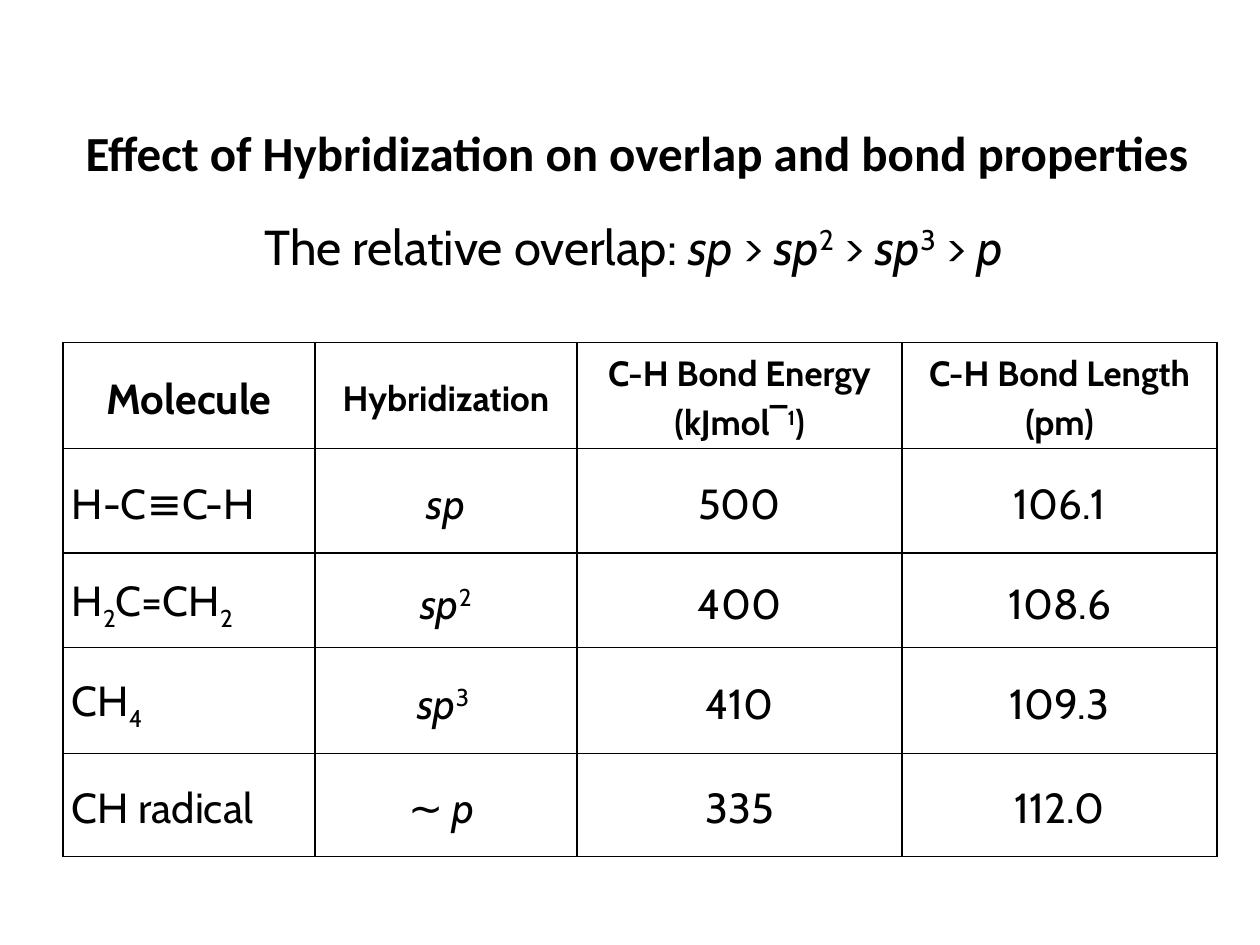
from typing import NamedTuple

import lxml.etree
import pptx
import pptx.dml.color
import pptx.enum.text
import pptx.oxml.ns
import pptx.util

Inches = pptx.util.Inches
Pt = pptx.util.Pt
Align = pptx.enum.text.PP_ALIGN
BLACK = pptx.dml.color.RGBColor(0, 0, 0)


class Run(NamedTuple):
    text: str
    italic: bool = False
    baseline: int = 0  # percent of the font size


class Heading(NamedTuple):
    lines: list[list[Run]]
    size: int = 20


def plain(text: str) -> Run:
    return Run(text)


def orbital(text: str) -> Run:
    return Run(text, italic=True)


def superscript(text: str) -> Run:
    return Run(text, baseline=30)


def subscript(text: str) -> Run:
    return Run(text, baseline=-25)


def write(frame, lines: list[list[Run]], *, size: int, font: str = "Cabin",
          bold: bool = False, align=Align.LEFT, line_spacing: float = 1.0,
          gap: int = 0) -> None:
    """Fill a text frame, one paragraph for each line of runs."""
    for index, line in enumerate(lines):
        paragraph = frame.add_paragraph() if index else frame.paragraphs[0]
        paragraph.alignment = align
        paragraph.line_spacing = line_spacing
        paragraph.space_before = paragraph.space_after = Pt(gap)
        for part in line:
            run = paragraph.add_run()
            run.text = part.text
            run.font.name = font
            run.font.size = Pt(size)
            run.font.bold = bold
            run.font.italic = part.italic
            run.font.color.rgb = BLACK
            if part.baseline:
                run.font._element.set("baseline", str(part.baseline * 1000))


def fit_on_one_line(frame) -> None:
    frame.word_wrap = False
    frame.auto_size = pptx.enum.text.MSO_AUTO_SIZE.SHAPE_TO_FIT_TEXT


def format_cell(cell) -> None:
    """Clear fill, thin black borders and narrow margins."""
    cell.margin_left = cell.margin_right = Inches(0.07)
    cell.margin_top = cell.margin_bottom = 0
    cell.vertical_anchor = pptx.enum.text.MSO_ANCHOR.MIDDLE
    properties = cell._tc.get_or_add_tcPr()
    qn = pptx.oxml.ns.qn
    for side in ("a:lnL", "a:lnR", "a:lnT", "a:lnB"):
        border = lxml.etree.SubElement(properties, qn(side), w=str(Pt(1)))
        fill = lxml.etree.SubElement(border, qn("a:solidFill"))
        lxml.etree.SubElement(fill, qn("a:srgbClr"), val=str(BLACK))
    cell.fill.background()


HEADINGS = [
    Heading([[plain("Molecule")]], size=24),
    Heading([[plain("Hybridization")]]),
    Heading([[plain("C-H Bond Energy")],
             [plain("(kJmol‾"), superscript("1"), plain(")")]]),
    Heading([[plain("C-H Bond Length")], [plain("(pm)")]]),
]
# Molecule, hybridization, bond energy, bond length
MOLECULES = [
    ([plain("H-C≡C-H")], [orbital("sp")], [plain("500")], [plain("106.1")]),
    ([plain("H"), subscript("2"), plain("C=CH"), subscript("2")],
     [orbital("sp"), superscript("2")], [plain("400")], [plain("108.6")]),
    ([plain("CH"), subscript("4")],
     [orbital("sp"), superscript("3 ")], [plain("410")], [plain("109.3")]),
    ([plain("CH radical")],
     [plain("∼ "), orbital("p ")], [plain("335")], [plain("112.0")]),
]
COLUMN_WIDTHS = [2, 2.08, 2.58, 2.5]
ROW_HEIGHTS = [0.84, 0.83, 0.75, 0.84, 0.82]


def add_bond_table(slide) -> None:
    bonds = slide.shapes.add_table(
        len(ROW_HEIGHTS), len(COLUMN_WIDTHS), Inches(0.5), Inches(2.72),
        Inches(sum(COLUMN_WIDTHS)), Inches(sum(ROW_HEIGHTS))).table
    bonds.first_row = bonds.horz_banding = False
    for column, width in zip(bonds.columns, COLUMN_WIDTHS):
        column.width = Inches(width)
    for row, height in zip(bonds.rows, ROW_HEIGHTS):
        row.height = Inches(height)
    for cell in bonds.iter_cells():
        format_cell(cell)

    for column, heading in enumerate(HEADINGS):
        write(bonds.cell(0, column).text_frame, heading.lines,
              size=heading.size, bold=True, align=Align.CENTER,
              line_spacing=1.15)
    for row, molecule in enumerate(MOLECULES, start=1):
        for column, entry in enumerate(molecule):
            write(bonds.cell(row, column).text_frame, [entry], size=24,
                  align=Align.CENTER if column else Align.LEFT,
                  line_spacing=1.15, gap=12)


def main() -> None:
    deck = pptx.Presentation()
    deck.slide_width, deck.slide_height = Inches(10), Inches(7.5)
    slide = deck.slides.add_slide(deck.slide_layouts.get_by_name("Title Only"))

    # Table of bond properties
    add_bond_table(slide)

    # Title
    title = slide.shapes.title
    title.left, title.top = Inches(0.58), Inches(0.92)
    title.width, title.height = Inches(9.07), Inches(0.57)
    fit_on_one_line(title.text_frame)
    write(title.text_frame,
          [[plain("Effect of Hybridization on overlap and bond properties")]],
          size=28, font="Calibri", bold=True)

    # Order of overlap
    overlap = slide.shapes.add_textbox(
        Inches(2), Inches(1.67), Inches(6.31), Inches(0.57)).text_frame
    fit_on_one_line(overlap)
    write(overlap, [[
        plain("The relative overlap: "), orbital("sp"), plain(" > "),
        orbital("sp"), superscript("2"), plain(" > "),
        orbital("sp"), superscript("3"), plain(" > "), orbital("p"),
    ]], size=28)

    deck.save("out.pptx")


if __name__ == "__main__":
    main()
